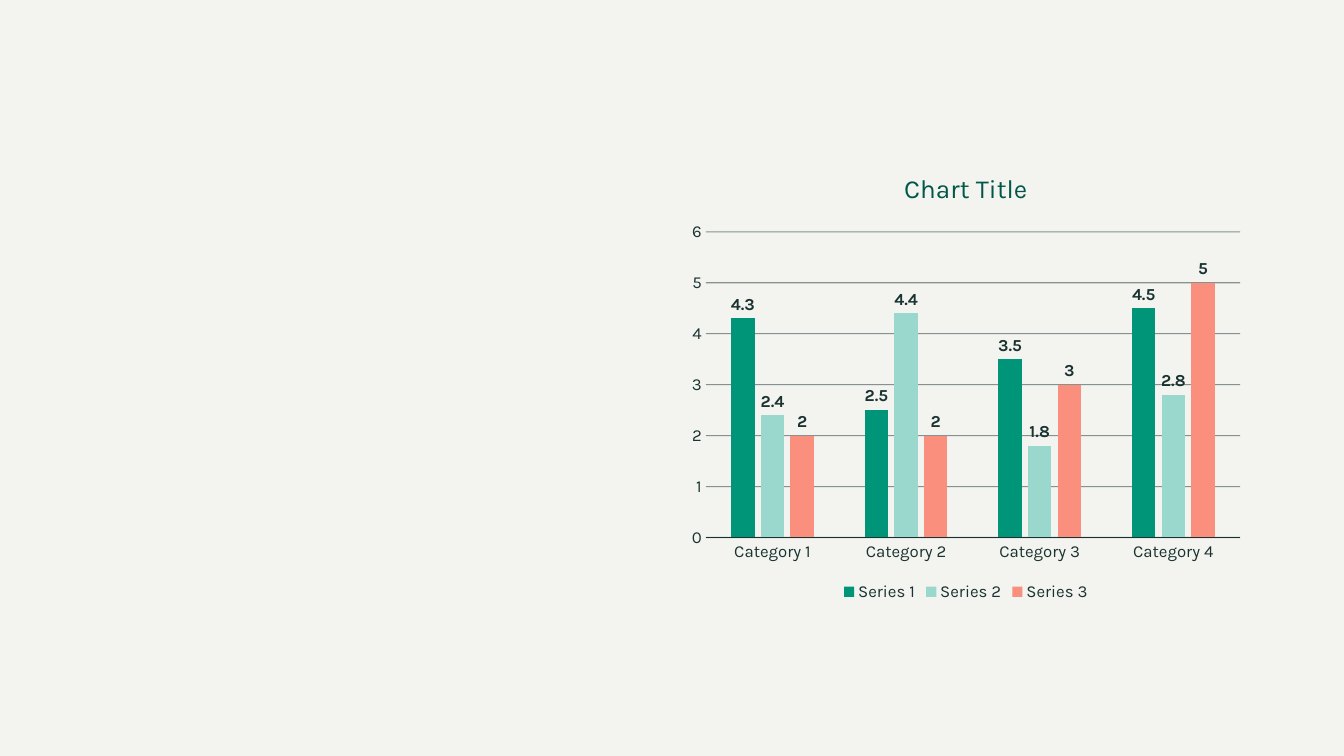
"""Build a slide with a clustered column chart on its right half."""
from dataclasses import dataclass

from lxml import etree
from pptx import Presentation
from pptx.chart.data import CategoryChartData
from pptx.dml.color import RGBColor
from pptx.dml.line import LineFormat
from pptx.enum.chart import XL_CHART_TYPE, XL_LABEL_POSITION, XL_LEGEND_POSITION, XL_TICK_MARK
from pptx.oxml.ns import qn
from pptx.text.text import Font
from pptx.util import Emu, Pt

COLUMNS = XL_CHART_TYPE.COLUMN_CLUSTERED
OUTSIDE_END = XL_LABEL_POSITION.OUTSIDE_END
LEGEND_BOTTOM = XL_LEGEND_POSITION.BOTTOM
NO_TICK = XL_TICK_MARK.NONE

BACKGROUND = RGBColor(0xF3, 0xF3, 0xEF)
INK = RGBColor(0x19, 0x33, 0x30)
TITLE_GREEN = RGBColor(0x00, 0x57, 0x49)
GREEN = RGBColor(0x00, 0x95, 0x79)
MINT = RGBColor(0x9A, 0xD8, 0xCE)
CORAL = RGBColor(0xF9, 0x8F, 0x7C)

FONT_NAME = "Karla"
EMU_PER_PX = 9525
BLANK_LAYOUT = 6


@dataclass(frozen=True)
class ColumnSeries:
    name: str
    values: tuple[float, ...]
    color: RGBColor


CATEGORIES = ("Category 1", "Category 2", "Category 3", "Category 4")
SERIES = (
    ColumnSeries("Series 1", (4.3, 2.5, 3.5, 4.5), GREEN),
    ColumnSeries("Series 2", (2.4, 4.4, 1.8, 2.8), MINT),
    ColumnSeries("Series 3", (2, 2, 3, 5), CORAL),
)


def px(length: int) -> Emu:
    return Emu(length * EMU_PER_PX)


def style_font(font: Font, size: float = 12, color: RGBColor = INK, bold: bool = False) -> None:
    font.name = FONT_NAME
    font.size = Pt(size)
    font.bold = bold
    font.color.rgb = color


def style_line(line: LineFormat) -> None:
    line.color.rgb = INK
    line.width = Pt(0.75)


def add_column_chart(page) -> None:
    chart_data = CategoryChartData()
    chart_data.categories = CATEGORIES
    for series in SERIES:
        chart_data.add_series(series.name, series.values)
    frame = page.shapes.add_chart(COLUMNS, px(648), px(145), px(544), px(432), chart_data)
    chart = frame.chart
    style_font(chart.font, 10, TITLE_GREEN)

    chart.has_title = True
    title_frame = chart.chart_title.text_frame
    title_frame.text = "Chart Title"
    style_font(title_frame.paragraphs[0].runs[0].font, 18.6, TITLE_GREEN)
    chart.chart_title.include_in_layout = False

    chart.has_legend = True
    chart.legend.position = LEGEND_BOTTOM
    chart.legend.include_in_layout = False
    style_font(chart.legend.font)

    for axis in (chart.category_axis, chart.value_axis):
        axis.major_tick_mark = NO_TICK
        axis.minor_tick_mark = NO_TICK
        style_font(axis.tick_labels.font)
    style_line(chart.category_axis.format.line)

    value_axis = chart.value_axis
    value_axis.minimum_scale = 0
    value_axis.maximum_scale = 6
    value_axis.major_unit = 1
    value_axis.format.line.fill.background()
    gridlines = value_axis.major_gridlines
    style_line(gridlines.format.line)
    grid_color = next(value_axis.major_gridlines.format.line.fill._xPr.iter(qn("a:srgbClr")))
    etree.SubElement(grid_color, qn("a:alpha"), val="50000")

    plot = chart.plots[0]
    plot.gap_width = 219
    plot.overlap = -27
    plot.vary_by_categories = False
    for series, columns in zip(SERIES, plot.series):
        columns.format.fill.solid()
        columns.format.fill.fore_color.rgb = series.color
        columns.invert_if_negative = False
        labels = columns.data_labels
        labels.show_value = True
        labels.position = OUTSIDE_END
        style_font(labels.font, bold=True)


def main() -> None:
    deck = Presentation()
    deck.slide_width, deck.slide_height = px(1280), px(720)
    page = deck.slides.add_slide(deck.slide_layouts[BLANK_LAYOUT])
    page.background.fill.solid()
    page.background.fill.fore_color.rgb = BACKGROUND
    add_column_chart(page)
    deck.save("out.pptx")


if __name__ == "__main__":
    main()
